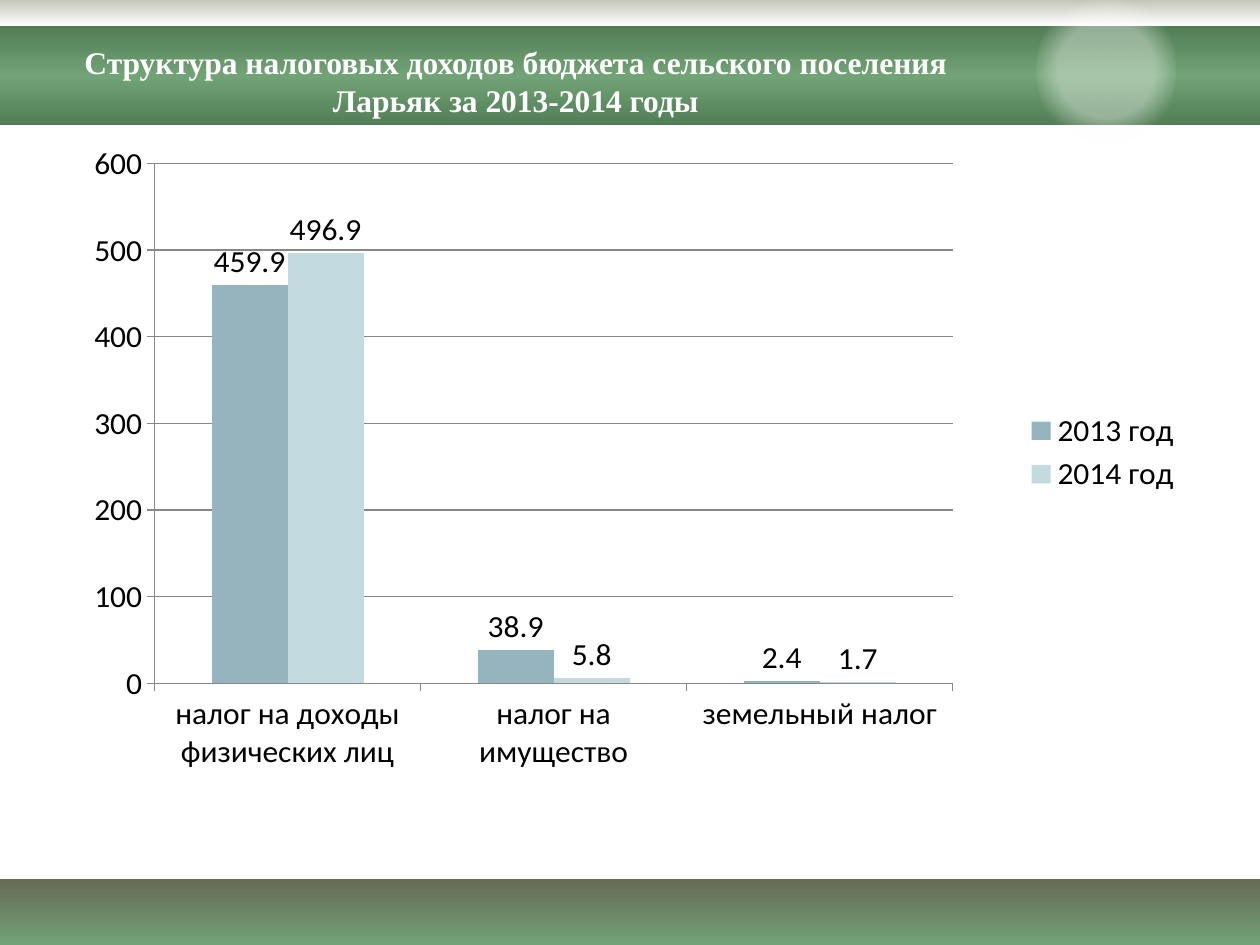
from dataclasses import dataclass

from lxml import etree
from pptx import Presentation
from pptx.chart.data import CategoryChartData
from pptx.dml.color import RGBColor
from pptx.enum.chart import XL_CHART_TYPE as ChartType
from pptx.enum.chart import XL_LABEL_POSITION as LabelPosition
from pptx.enum.chart import XL_LEGEND_POSITION as LegendPosition
from pptx.enum.chart import XL_TICK_MARK as TickMark
from pptx.enum.shapes import MSO_SHAPE as Shape
from pptx.enum.text import MSO_ANCHOR as Anchor
from pptx.enum.text import MSO_AUTO_SIZE as AutoSize
from pptx.enum.text import PP_ALIGN as Align
from pptx.oxml import parse_xml
from pptx.oxml.ns import qn
from pptx.util import Cm, Pt


@dataclass(frozen=True)
class Theme:
    white: str = "FFFFFF"
    black: str = "000000"
    axis: str = "878787"
    green: str = "72A376"
    dark_green: str = "527E56"
    olive: str = "676A55"
    pale_olive: str = "C4C6B8"
    series: tuple = ("95B4BE", "C2DAE0")
    title_font: str = "Times New Roman"
    chart_font: str = "Calibri"
    text_size: int = 18


theme = Theme()


def add_gradient_shape(page, kind, frame, stops, direction):
    shape = page.shapes.add_shape(kind, *map(Cm, frame))
    shape.shadow.inherit = False
    shape.line.fill.background()
    stop_xml = "".join(
        f'<a:gs pos="{place * 1000}"><a:srgbClr val="{color}">'
        f'<a:alpha val="{alpha * 1000}"/></a:srgbClr></a:gs>'
        for place, color, alpha in stops
    )
    gradient = parse_xml(
        '<a:gradFill xmlns:a="http://schemas.openxmlformats.org/drawingml/2006/main" '
        f'rotWithShape="1"><a:gsLst>{stop_xml}</a:gsLst>{direction}</a:gradFill>'
    )
    shape.element.spPr.find(qn("a:prstGeom")).addnext(gradient)


deck = Presentation()
deck.slide_width, deck.slide_height = Cm(25.4), Cm(19.05)
page = deck.slides.add_slide(deck.slide_layouts[5])
page.background.fill.solid()
page.background.fill.fore_color.rgb = RGBColor.from_string(theme.white)

downward = '<a:lin ang="5400000" scaled="0"/>'
radial = '<a:path path="circle"><a:fillToRect l="50000" t="50000" r="50000" b="50000"/></a:path>'
bands = [
    (17.73, 1.32, [theme.olive, theme.green]),
    (0, 0.53, [theme.pale_olive, theme.white]),
    (0.53, 2, [theme.dark_green, theme.green, theme.dark_green]),
]
for top, height, colors in bands:
    step = 100 // (len(colors) - 1)
    stops = [(index * step, color, 100) for index, color in enumerate(colors)]
    add_gradient_shape(page, Shape.RECTANGLE, (0, top, 25.4, height), stops, downward)
glow = [(44, theme.white, 38), (67, theme.white, 0)]
add_gradient_shape(page, Shape.OVAL, (20.9, -0.28, 2.8, 3.4), glow, radial)

title = page.shapes.title
title.left, title.top, title.width, title.height = Cm(0.3), Cm(0.74), Cm(20.2), Cm(2.57)
page.shapes._spTree.append(title.element)
frame = title.text_frame
frame.text = "Структура налоговых доходов бюджета сельского поселения Ларьяк за 2013-2014 годы"
frame.word_wrap = True
frame.auto_size = AutoSize.NONE
frame.vertical_anchor = Anchor.TOP
para = frame.paragraphs[0]
para.alignment = Align.CENTER
font = para.runs[0].font
font.name, font.size, font.bold = theme.title_font, Pt(theme.text_size), True
font.color.rgb = RGBColor.from_string(theme.white)

data = CategoryChartData(number_format="General")
data.categories = ["налог на доходы физических лиц", "налог на имущество", "земельный налог"]
data.add_series("2013 год", (459.9, 38.9, 2.4))
data.add_series("2014 год", (496.9, 5.8, 1.7))
chart = page.shapes.add_chart(
    ChartType.COLUMN_CLUSTERED, Cm(0.89), Cm(2.92), Cm(23.19), Cm(12.6), data
).chart
chart.has_title = False
chart.font.name, chart.font.size = theme.chart_font, Pt(theme.text_size)
chart.font.color.rgb = RGBColor.from_string(theme.black)
chart.has_legend = True
chart.legend.position = LegendPosition.RIGHT
chart.legend.include_in_layout = False

values = chart.value_axis
values.minimum_scale, values.maximum_scale, values.major_unit = 0, 600, 100
values.has_major_gridlines = True
for axis in (values, chart.category_axis):
    axis.major_tick_mark = TickMark.OUTSIDE
for line in (values.format.line, values.major_gridlines.format.line, chart.category_axis.format.line):
    line.color.rgb = RGBColor.from_string(theme.axis)
    line.width = Pt(0.75)

plot = chart.plots[0]
plot.vary_by_categories = False
plot.gap_width, plot.overlap = 150, 0
for series, color in zip(plot.series, theme.series):
    series.format.fill.solid()
    series.format.fill.fore_color.rgb = RGBColor.from_string(color)
    series.data_labels.show_value = True
    series.data_labels.position = LabelPosition.OUTSIDE_END

plot_area = chart.element.find(".//" + qn("c:plotArea"))
for old_layout in plot_area.findall(qn("c:layout")):
    plot_area.remove(old_layout)
layout = etree.Element(qn("c:layout"))
manual = etree.SubElement(layout, qn("c:manualLayout"))
settings = [
    ("layoutTarget", "inner"), ("xMode", "edge"), ("yMode", "edge"),
    ("x", "0.096"), ("y", "0.026"), ("w", "0.694"), ("h", "0.853"),
]
for name, value in settings:
    etree.SubElement(manual, qn(f"c:{name}")).set("val", value)
plot_area.insert(0, layout)

deck.save("out.pptx")
